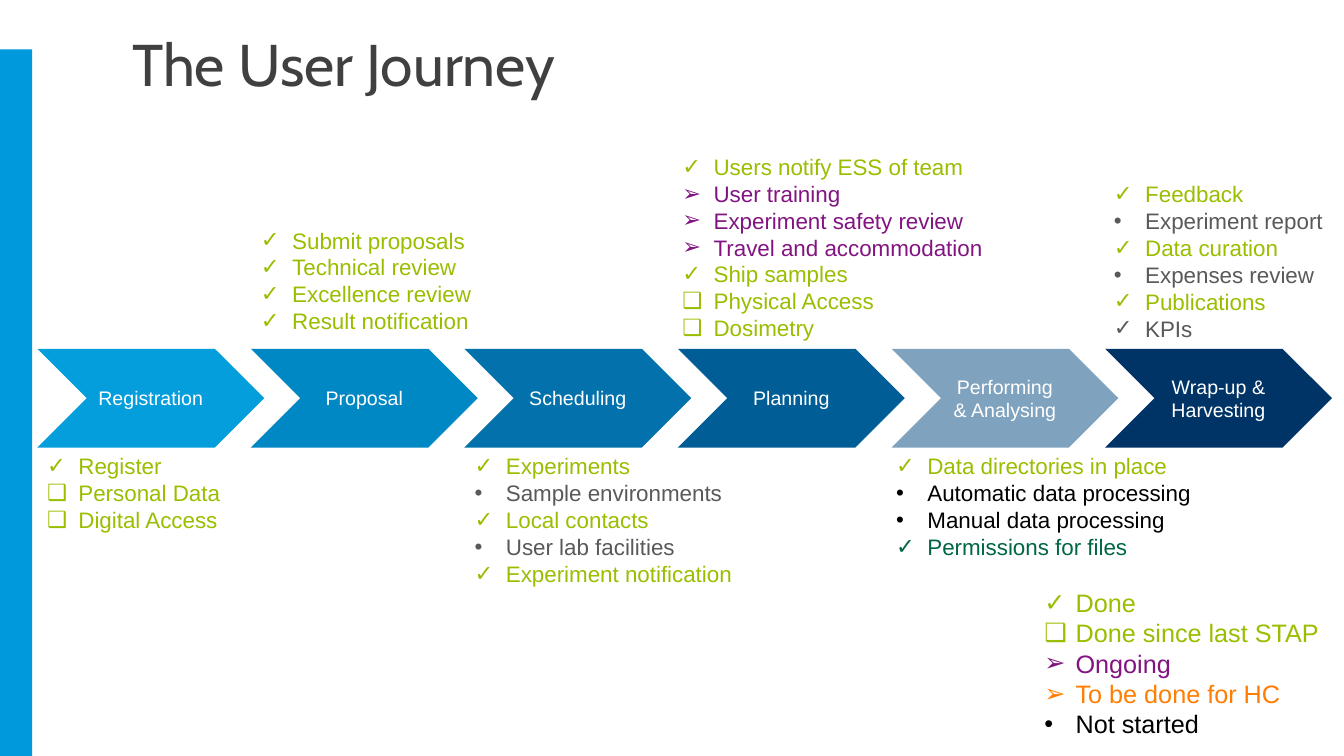
"""Build the user journey slide."""
import pptx
import pptx.util
import pptx.dml.color
import pptx.enum.shapes
import pptx.enum.text
import pptx.oxml
import pptx.oxml.ns

Inches, Pt = pptx.util.Inches, pptx.util.Pt
RGBColor = pptx.dml.color.RGBColor
SHAPE = pptx.enum.shapes.MSO_SHAPE
ALIGN, ANCHOR = pptx.enum.text.PP_ALIGN, pptx.enum.text.MSO_ANCHOR
AUTO_SIZE = pptx.enum.text.MSO_AUTO_SIZE

WHITE = RGBColor(0xFF, 0xFF, 0xFF)
BLACK = RGBColor(0x00, 0x00, 0x00)
TITLE_GREY = RGBColor(0x40, 0x40, 0x40)
GREY = RGBColor(0x59, 0x59, 0x59)
LIME = RGBColor(0x99, 0xBE, 0x00)
GREEN = RGBColor(0x00, 0x66, 0x46)
PURPLE = RGBColor(0x82, 0x14, 0x82)
ORANGE = RGBColor(0xFF, 0x7D, 0x00)
SIDEBAR = RGBColor(0x00, 0x99, 0xDC)
STAGE_FILLS = [
    RGBColor(0x04, 0x9E, 0xDC), RGBColor(0x00, 0x88, 0xC4), RGBColor(0x03, 0x72, 0xAC),
    RGBColor(0x00, 0x5D, 0x95), RGBColor(0x00, 0x48, 0x7E), RGBColor(0x00, 0x33, 0x66),
]

DONE = ("✓", LIME)
RECENT = ("❑", LIME)
ONGOING = ("➢", PURPLE)
FOR_HC = ("➢", ORANGE)
OPEN = ("•", BLACK)
OPEN_GREY = ("•", GREY)

STAGES = ["Registration", "Proposal", "Scheduling", "Planning",
          "Performing & Analysing", "Wrap-up & Harvesting"]
CURRENT_STAGE = "Performing & Analysing"

CHECKLISTS = [
    (0.37, 4.44, 3.14, [
        ("Register", DONE), ("Personal Data", RECENT), ("Digital Access", RECENT)]),
    (2.49, 2.2, 3.42, [
        ("Submit proposals", DONE), ("Technical review", DONE),
        ("Excellence review", DONE), ("Result notification", DONE)]),
    (4.61, 4.44, 3.36, [
        ("Experiments", DONE), ("Sample environments", OPEN_GREY),
        ("Local contacts", DONE), ("User lab facilities", OPEN_GREY),
        ("Experiment notification", DONE)]),
    (6.67, 1.47, 3.53, [
        ("Users notify ESS of team", DONE), ("User training", ONGOING),
        ("Experiment safety review", ONGOING), ("Travel and accommodation", ONGOING),
        ("Ship samples", DONE), ("Physical Access", RECENT), ("Dosimetry", RECENT)]),
    (8.79, 4.44, 3.53, [
        ("Data directories in place", DONE), ("Automatic data processing", OPEN),
        ("Manual data processing", OPEN), ("Permissions for files", ("✓", GREEN))]),
    (10.95, 1.74, 2.38, [
        ("Feedback", DONE), ("Experiment report", OPEN_GREY), ("Data curation", DONE),
        ("Expenses review", OPEN_GREY), ("Publications", DONE), ("KPIs", ("✓", GREY))]),
]
LEGEND = [("Done", DONE), ("Done since last STAP", RECENT), ("Ongoing", ONGOING),
          ("To be done for HC", FOR_HC), ("Not started", OPEN)]


def style(p, font, size, color):
    """Format every run of a paragraph."""
    for r in p.runs:
        r.font.name, r.font.size = font, Pt(size)
        r.font.color.rgb = color


def add_solid(s, shape, left, top, width, height, color):
    """Add a flat filled shape without outline."""
    sp = s.shapes.add_shape(shape, Inches(left), Inches(top), Inches(width), Inches(height))
    sp.shadow.inherit = False
    sp.fill.solid()
    sp.fill.fore_color.rgb = color
    sp.line.fill.background()
    return sp


def add_title(s, left, top, width, height):
    """Place and format the title placeholder."""
    sp = s.shapes.title
    sp.left, sp.top = Inches(left), Inches(top)
    sp.width, sp.height = Inches(width), Inches(height)
    tf = sp.text_frame
    tf.text = "The User Journey"
    tf.auto_size = AUTO_SIZE.NONE
    tf.vertical_anchor = ANCHOR.MIDDLE
    tf.margin_left = tf.margin_right = Inches(0.1)
    tf.margin_top, tf.margin_bottom = Inches(0.05), Inches(0.02)
    p = tf.paragraphs[0]
    p.alignment, p.line_spacing = ALIGN.LEFT, 0.9
    style(p, "Cabin", 42, TITLE_GREY)


def add_stages(s, left, top, width, height):
    """Spread the overlapping chevrons evenly over the band."""
    stage_width = 2.25
    pitch = (width - stage_width) / (len(STAGES) - 1)
    for i, (label, color) in enumerate(zip(STAGES, STAGE_FILLS)):
        sp = add_solid(s, SHAPE.CHEVRON, left + i * pitch, top, stage_width, height, color)
        if label == CURRENT_STAGE:
            clr = sp.fill._xPr.find(".//" + pptx.oxml.ns.qn("a:srgbClr"))
            clr.append(pptx.oxml.parse_xml(
                f'<a:alpha {pptx.oxml.ns.nsdecls("a")} val="50000"/>'))
        tf = sp.text_frame
        tf.text = label
        tf.word_wrap = True
        tf.vertical_anchor = ANCHOR.MIDDLE
        p = tf.paragraphs[0]
        p.alignment = ALIGN.CENTER
        style(p, "Arial", 14, WHITE)


def add_bullet(p, mark):
    """Give a paragraph a hanging bullet."""
    pPr = p._p.get_or_add_pPr()
    pPr.set("marL", str(Inches(0.31)))
    pPr.set("indent", str(-Inches(0.31)))
    ns = pptx.oxml.ns.nsdecls("a")
    pPr.append(pptx.oxml.parse_xml(f'<a:buFont {ns} typeface="Arial"/>'))
    pPr.append(pptx.oxml.parse_xml(f'<a:buChar {ns} char="{mark}"/>'))


def add_checklist(s, left, top, width, items, size=16, wrap=True):
    """Add a list whose marks and colours show each status."""
    height = 0.1 + len(items) * size * 1.21 / 72
    sp = s.shapes.add_textbox(Inches(left), Inches(top), Inches(width), Inches(height))
    tf = sp.text_frame
    tf.word_wrap = wrap
    tf.auto_size = AUTO_SIZE.SHAPE_TO_FIT_TEXT
    for i, (text, (mark, color)) in enumerate(items):
        p = tf.add_paragraph() if i else tf.paragraphs[0]
        p.text = text
        add_bullet(p, mark)
        style(p, "Arial", size, color)


def main():
    """Build and save the slide."""
    prs = pptx.Presentation()
    prs.slide_width, prs.slide_height = Inches(13.33), Inches(7.5)
    s = prs.slides.add_slide(prs.slide_layouts[5])
    add_solid(s, SHAPE.RECTANGLE, 0, 0.49, 0.32, 7.01, SIDEBAR)
    add_title(s, 1.21, 0.29, 10.24, 0.72)
    add_stages(s, 0.37, 3.46, 12.84, 0.98)
    for left, top, width, items in CHECKLISTS:
        add_checklist(s, left, top, width, items)
    add_checklist(s, 10.26, 5.78, 2.95, LEGEND, size=18, wrap=False)
    prs.save("out.pptx")


if __name__ == "__main__":
    main()
